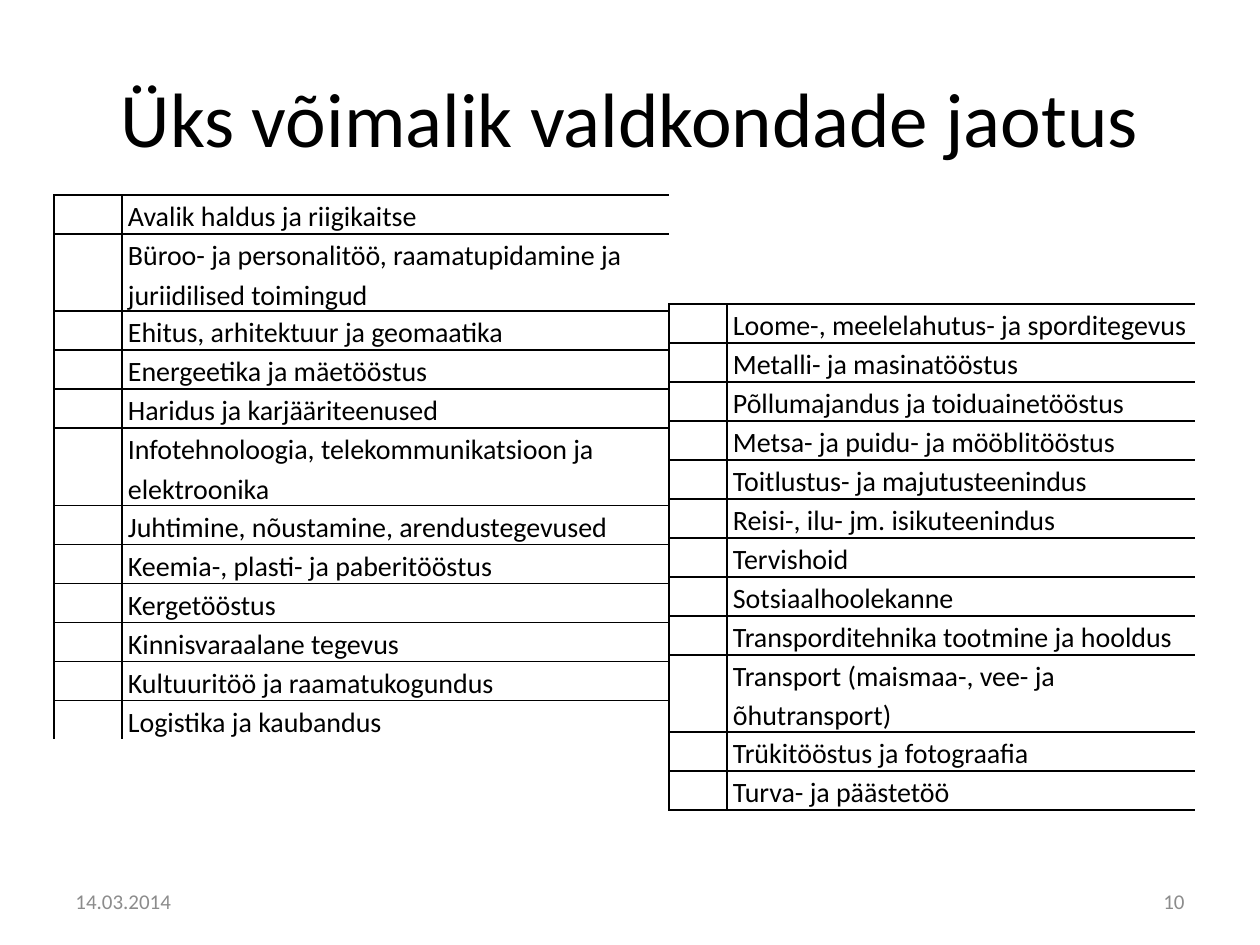
from lxml import etree
from pptx import Presentation
from pptx.dml.color import RGBColor
from pptx.enum.text import MSO_ANCHOR, PP_ALIGN
from pptx.oxml.ns import qn
from pptx.util import Pt

LEFT, CENTER, RIGHT = PP_ALIGN.LEFT, PP_ALIGN.CENTER, PP_ALIGN.RIGHT
MIDDLE, BOTTOM = MSO_ANCHOR.MIDDLE, MSO_ANCHOR.BOTTOM
BLACK = RGBColor(0x00, 0x00, 0x00)
GRAY = RGBColor(0x8C, 0x8C, 0x8C)
FONT = "Calibri"
SCALE = 914400 / 126
ROW_HEIGHT = 39

LEFT_FIELDS = [
    "Avalik haldus ja riigikaitse",
    "Büroo- ja personalitöö, raamatupidamine ja juriidilised toimingud",
    "Ehitus, arhitektuur ja geomaatika",
    "Energeetika ja mäetööstus",
    "Haridus ja karjääriteenused",
    "Infotehnoloogia, telekommunikatsioon ja elektroonika",
    "Juhtimine, nõustamine, arendustegevused",
    "Keemia-, plasti- ja paberitööstus",
    "Kergetööstus",
    "Kinnisvaraalane tegevus",
    "Kultuuritöö ja raamatukogundus",
    "Logistika ja kaubandus",
]
RIGHT_FIELDS = [
    "Loome-, meelelahutus- ja sporditegevus",
    "Metalli- ja masinatööstus",
    "Põllumajandus ja toiduainetööstus",
    "Metsa- ja puidu- ja mööblitööstus",
    "Toitlustus- ja majutusteenindus",
    "Reisi-, ilu- jm. isikuteenindus",
    "Tervishoid",
    "Sotsiaalhoolekanne",
    "Transporditehnika tootmine ja hooldus",
    "Transport (maismaa-, vee- ja õhutransport)",
    "Trükitööstus ja fotograafia",
    "Turva- ja päästetöö",
]


def px(length):
    """Turn a length in px into EMU."""
    return round(length * SCALE)


def style_text(para, size, color):
    """Format every run of a paragraph."""
    for span in para.runs:
        span.font.name = FONT
        span.font.size = Pt(size)
        span.font.color.rgb = color


def add_label(page, box, text, size, color, align):
    """Place one line of text, centred vertically in its box."""
    frame = page.shapes.add_textbox(*map(px, box)).text_frame
    frame.word_wrap = True
    frame.vertical_anchor = MIDDLE
    frame.text = text
    para = frame.paragraphs[0]
    para.alignment = align
    style_text(para, size, color)


def set_borders(cell, sides):
    """Draw black lines on the named sides of a cell and clear the others."""
    props = cell._tc.get_or_add_tcPr()
    for side in "LRTB":
        line = etree.SubElement(props, qn(f"a:ln{side}"), w=str(Pt(1)))
        if side in sides:
            fill = etree.SubElement(line, qn("a:solidFill"))
            etree.SubElement(fill, qn("a:srgbClr"), val=str(BLACK))
        else:
            etree.SubElement(line, qn("a:noFill"))


def add_field_table(page, box, marker_width, fields, closed):
    """List fields beside an empty column, with a bottom line if closed."""
    left, top, width, height = box
    frame = page.shapes.add_table(len(fields), 2, *map(px, box))
    table = frame.table
    table.first_row = table.horz_banding = False
    table.columns[0].width = px(marker_width)
    table.columns[1].width = px(width - marker_width)
    for index, field in enumerate(fields):
        last = index == len(fields) - 1
        table.rows[index].height = px(ROW_HEIGHT)
        for column, text in enumerate(("", field)):
            cell = table.cell(index, column)
            cell.margin_left = cell.margin_right = px(6)
            cell.margin_top = cell.margin_bottom = 0
            cell.vertical_anchor = BOTTOM
            sides = ("LRT", "LT")[column]
            set_borders(cell, sides if last and not closed else sides + "B")
            cell.fill.background()
            if text:
                cell.text_frame.text = text
                para = cell.text_frame.paragraphs[0]
                para.line_spacing = 1.15
                style_text(para, 16, BLACK)


def add_footer(page, box, date, number):
    """Put the date at the left and the page number at the right of the box."""
    left, top, width, height = box
    part = 294
    add_label(page, (left, top, part, height), date, 12, GRAY, LEFT)
    add_label(page, (left + width - part, top, part, height), number, 12, GRAY, RIGHT)


def main():
    """Build the slide and save it."""
    deck = Presentation()
    deck.slide_width, deck.slide_height = px(1260), px(945)
    page = deck.slides.add_slide(deck.slide_layouts[6])
    add_label(page, (63, 38, 1134, 157), "Üks võimalik valdkondade jaotus", 44, BLACK, CENTER)
    add_field_table(page, (54, 195, 615, 541), 68, LEFT_FIELDS, False)
    add_field_table(page, (669, 304, 526, 503), 58, RIGHT_FIELDS, True)
    add_footer(page, (63, 876, 1134, 50), "14.03.2014", "10")
    deck.save("out.pptx")


if __name__ == "__main__":
    main()
